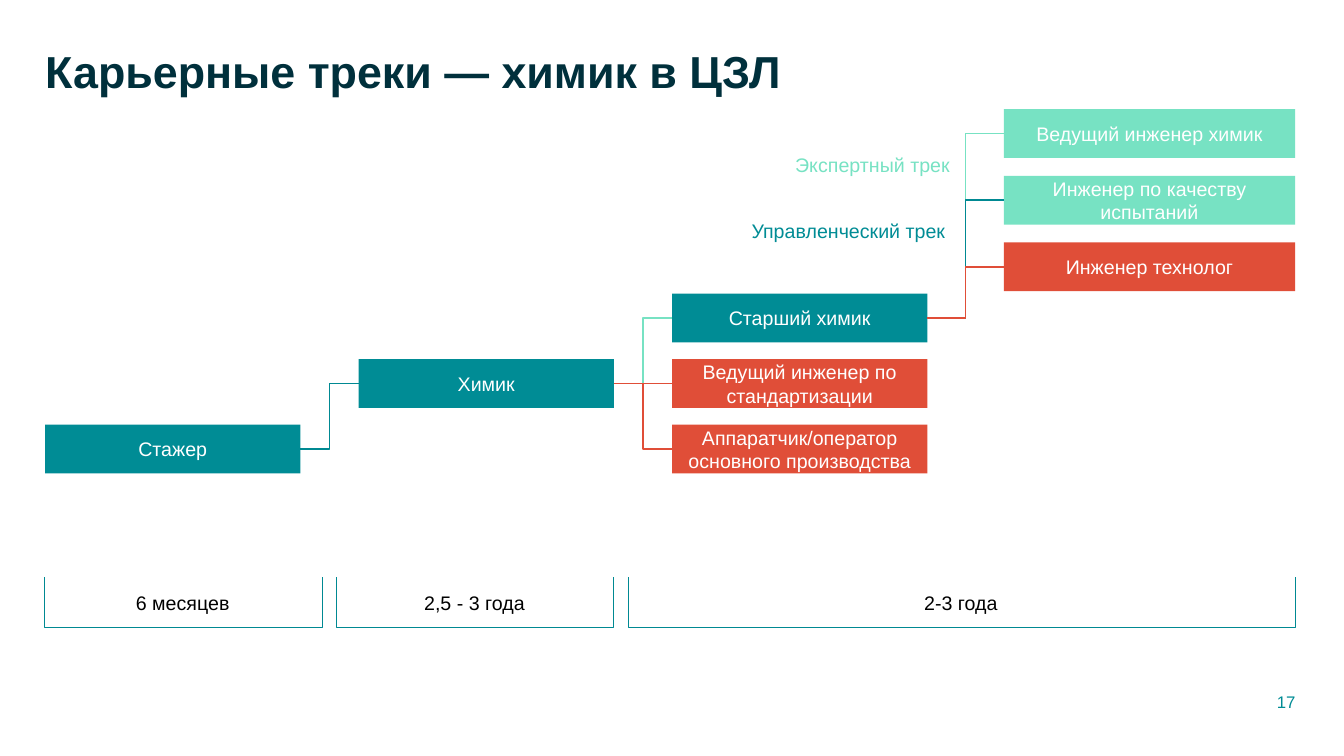
from lxml import etree
from pptx import Presentation
from pptx.dml.color import RGBColor
from pptx.enum.shapes import MSO_CONNECTOR, MSO_SHAPE
from pptx.enum.text import MSO_ANCHOR, MSO_AUTO_SIZE, PP_ALIGN
from pptx.oxml.ns import qn
from pptx.util import Cm, Pt

RECTANGLE, LEFT_BRACKET = MSO_SHAPE.RECTANGLE, MSO_SHAPE.LEFT_BRACKET
ELBOW = MSO_CONNECTOR.ELBOW
LEFT, CENTER, RIGHT = PP_ALIGN.LEFT, PP_ALIGN.CENTER, PP_ALIGN.RIGHT
TOP, MIDDLE = MSO_ANCHOR.TOP, MSO_ANCHOR.MIDDLE
NO_FIT, FIT_SHAPE = MSO_AUTO_SIZE.NONE, MSO_AUTO_SIZE.SHAPE_TO_FIT_TEXT
LEFT_SITE, RIGHT_SITE = 1, 3

NAVY, TEAL, LINE_TEAL = "00303C", "008C95", "008992"
MINT, RED, WHITE, BLACK = "77E2C3", "E04E38", "FFFFFF", "000000"


def color(hex_value):
    return RGBColor.from_string(hex_value)


class CareerSlide:
    font_name = "Arial"
    text_size = 14
    box_height = 1.23
    bracket_top, bracket_depth = 14.54, 1.27
    label_height = 0.86

    def __init__(self, presentation):
        self.slide = presentation.slides.add_slide(presentation.slide_layouts[5])
        self.shapes = self.slide.shapes

    def set_text(self, shape, text, hex_value, size=text_size, align=LEFT, anchor=TOP, bold=False):
        frame = shape.text_frame
        frame.text = text
        frame.vertical_anchor = anchor
        paragraph = frame.paragraphs[0]
        paragraph.alignment = align
        font = paragraph.runs[0].font
        font.name, font.size, font.bold = self.font_name, Pt(size), bold
        font.color.rgb = color(hex_value)
        return frame

    def title(self, text, left, top, width, height):
        heading = self.shapes.title
        heading.left, heading.top = Cm(left), Cm(top)
        heading.width, heading.height = Cm(width), Cm(height)
        frame = self.set_text(heading, text, NAVY, size=32, bold=True)
        frame.margin_left = 0
        frame.auto_size = NO_FIT
        frame.paragraphs[0].line_spacing = 0.9

    def position(self, text, left, top, width, fill):
        box = self.shapes.add_shape(RECTANGLE, Cm(left), Cm(top), Cm(width), Cm(self.box_height))
        box.shadow.inherit = False
        box.fill.solid()
        box.fill.fore_color.rgb = color(fill)
        box.line.fill.background()
        self.set_text(box, text, WHITE, align=CENTER, anchor=MIDDLE).word_wrap = True
        return box

    def step(self, start, end, hex_value):
        link = self.shapes.add_connector(ELBOW, 0, 0, 0, 0)
        link.begin_connect(start, RIGHT_SITE)
        link.end_connect(end, LEFT_SITE)
        link.line.color.rgb = color(hex_value)
        link.line.width = Pt(1.25)
        etree.SubElement(link._element.spPr, qn("a:effectLst"))

    def label(self, text, left, top, width, hex_value):
        box = self.shapes.add_textbox(Cm(left), Cm(top), Cm(width), Cm(self.label_height))
        frame = self.set_text(box, text, hex_value)
        frame.word_wrap = False
        frame.auto_size = FIT_SHAPE

    def period(self, text, left, span, text_width):
        center = left + span / 2
        depth = self.bracket_depth
        bracket = self.shapes.add_shape(
            LEFT_BRACKET, Cm(center - depth / 2), Cm(self.bracket_top + depth / 2 - span / 2),
            Cm(depth), Cm(span))
        bracket.rotation = 270
        bracket.adjustments[0] = 0
        bracket.shadow.inherit = False
        bracket.fill.background()
        bracket.line.color.rgb = color(LINE_TEAL)
        bracket.line.width = Pt(0.75)
        self.label(text, center - text_width / 2, 14.76, text_width, BLACK)

    def page_number(self, text, left, top, width, height):
        box = self.shapes.add_textbox(Cm(left), Cm(top), Cm(width), Cm(height))
        self.set_text(box, text, TEAL, size=12, align=RIGHT, anchor=MIDDLE).word_wrap = True


def main():
    presentation = Presentation()
    presentation.slide_width, presentation.slide_height = Cm(33.87), Cm(19.05)
    career = CareerSlide(presentation)
    career.title("Карьерные треки — химик в ЦЗЛ", 1.14, 1.12, 27.36, 2.82)

    stage_columns = [1.14 + 7.9 * i for i in range(3)]
    stage_rows = [7.4 + 1.65 * i for i in range(3)]
    senior_rows = [2.75 + 1.68 * i for i in range(3)]
    stage_width, senior_left, senior_width = 6.43, 25.3, 7.34

    trainee = career.position("Стажер", stage_columns[0], stage_rows[2], stage_width, TEAL)
    chemist = career.position("Химик", stage_columns[1], stage_rows[1], stage_width, TEAL)
    senior_chemist, standards_lead, operator = [
        career.position(text, stage_columns[2], top, stage_width, fill)
        for top, (text, fill) in zip(stage_rows, [
            ("Старший химик", TEAL),
            ("Ведущий инженер по стандартизации", RED),
            ("Аппаратчик/оператор основного производства", RED),
        ])
    ]
    lead_chemist, quality_engineer, technologist = [
        career.position(text, senior_left, top, senior_width, fill)
        for top, (text, fill) in zip(senior_rows, [
            ("Ведущий инженер химик", MINT),
            ("Инженер по качеству испытаний", MINT),
            ("Инженер технолог", RED),
        ])
    ]

    for start, end, hex_value in [
        (trainee, chemist, LINE_TEAL),
        (chemist, senior_chemist, MINT),
        (senior_chemist, lead_chemist, MINT),
        (senior_chemist, quality_engineer, LINE_TEAL),
        (chemist, standards_lead, RED),
        (chemist, operator, RED),
        (senior_chemist, technologist, RED),
    ]:
        career.step(start, end, hex_value)

    period_left, period_gap = 1.13, 0.36
    for text, span, text_width in [
        ("6 месяцев", 6.99, 2.9),
        ("2,5 - 3 года", 6.99, 3.07),
        ("2-3 года", 16.81, 2.39),
    ]:
        career.period(text, period_left, span, text_width)
        period_left += span + period_gap

    career.label("Управленческий трек", 18.69, 5.38, 5.46, TEAL)
    career.label("Экспертный трек", 19.79, 3.73, 4.45, MINT)
    career.page_number("17", 31.55, 17.42, 1.35, 0.51)
    presentation.save("out.pptx")


if __name__ == "__main__":
    main()
